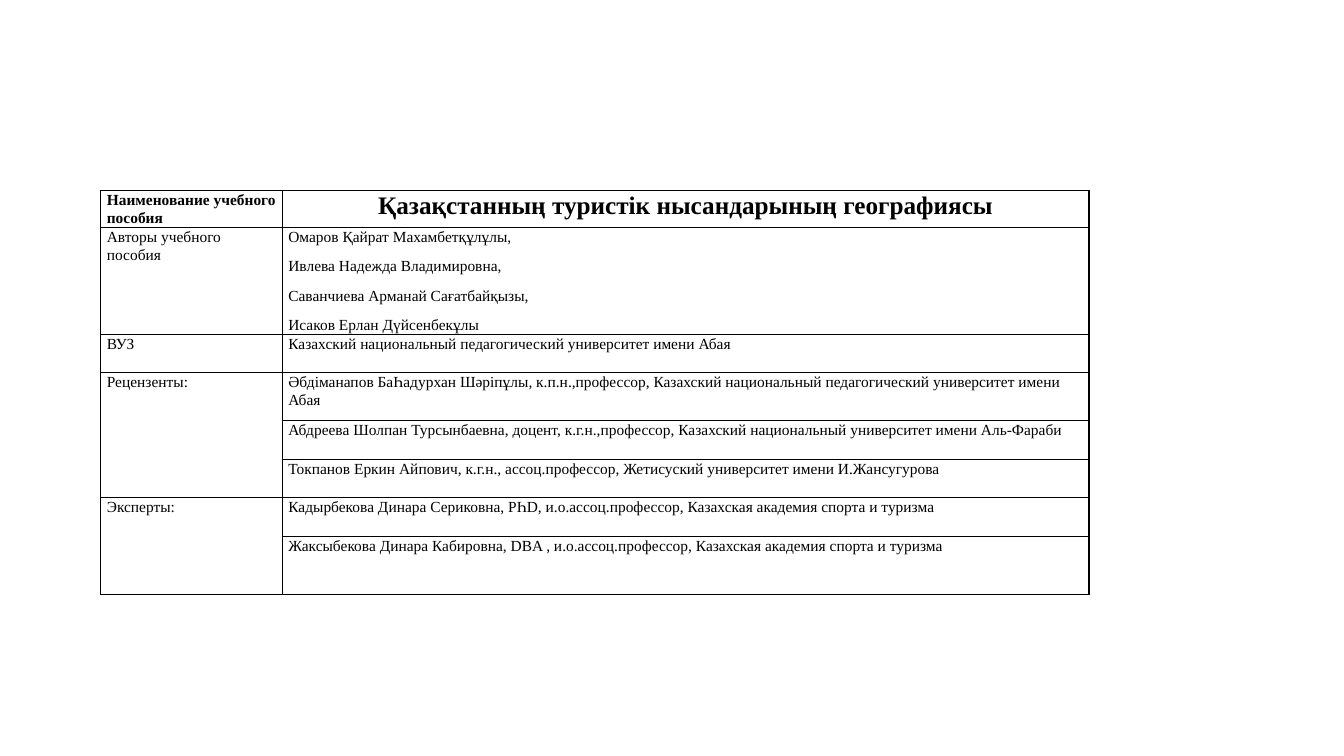
from lxml.etree import SubElement
from pptx import Presentation
from pptx.dml.color import RGBColor
from pptx.enum.text import PP_ALIGN
from pptx.oxml.ns import qn
from pptx.util import Inches, Pt


def color(code):
    return RGBColor.from_string(code)


def write(frame, text, size=11, bold=False, align=PP_ALIGN.LEFT,
          font="Times New Roman", ink="000000"):
    """Fill a text frame, one paragraph per line of text."""
    frame.word_wrap = True
    for i, line in enumerate(text.split("\n")):
        para = frame.paragraphs[0] if i == 0 else frame.add_paragraph()
        para.alignment = align
        para.line_spacing = 1.07
        para.space_before = Pt(0)
        para.space_after = Pt(8)
        run = para.add_run()
        run.text = line
        run.font.name = font
        run.font.size = Pt(size)
        run.font.bold = bold
        run.font.color.rgb = color(ink)


class Deck:
    line = "000000"
    inset = 0.06

    def __init__(self, show):
        self.slide = show.slides.add_slide(show.slide_layouts[6])

    def border(self, cell, width=1):
        props = cell._tc.get_or_add_tcPr()
        for side in ("lnL", "lnR", "lnT", "lnB"):
            edge = SubElement(props, qn("a:" + side), w=str(Pt(width)))
            fill = SubElement(edge, qn("a:solidFill"))
            SubElement(fill, qn("a:srgbClr"), val=self.line)

    def table(self, left, top, cols, rows):
        frame = self.slide.shapes.add_table(
            len(rows), len(cols), Inches(left), Inches(top),
            Inches(sum(cols)), Inches(sum(rows)))
        grid = frame.table
        grid.first_row = grid.horz_banding = False
        for col, width in zip(grid.columns, cols):
            col.width = Inches(width)
        for row, height in zip(grid.rows, rows):
            row.height = Inches(height)
        for cell in grid.iter_cells():
            cell.margin_left = cell.margin_right = Inches(self.inset)
            cell.margin_top = cell.margin_bottom = 0
            self.border(cell)
            cell.fill.background()
        return grid


# Each group: label, then the entries beside it
GROUPS = [
    ("Наименование учебного пособия",
     ["Қазақстанның туристік нысандарының географиясы"]),
    ("Авторы учебного пособия",
     ["Омаров Қайрат Махамбетқұлұлы,\n"
      "Ивлева Надежда Владимировна,\n"
      "Саванчиева Арманай Сағатбайқызы,\n"
      "Исаков Ерлан Дүйсенбекұлы"]),
    ("ВУЗ",
     ["Казахский национальный педагогический университет имени Абая"]),
    ("Рецензенты:",
     ["Әбдіманапов БаҺадурхан Шәріпұлы, к.п.н.,профессор, "
      "Казахский национальный педагогический университет имени Абая",
      "Абдреева Шолпан Турсынбаевна, доцент, к.г.н.,профессор, "
      "Казахский национальный университет имени Аль-Фараби",
      "Токпанов Еркин Айпович, к.г.н., ассоц.профессор, "
      "Жетисуский университет имени И.Жансугурова"]),
    ("Эксперты:",
     ["Кадырбекова Динара Сериковна, PҺD, и.о.ассоц.профессор, "
      "Казахская академия спорта и туризма",
      "Жаксыбекова Динара Кабировна, DBA , и.о.ассоц.профессор, "
      "Казахская академия спорта и туризма"]),
]


def main():
    show = Presentation()
    show.slide_width, show.slide_height = Inches(13.33), Inches(7.5)
    deck = Deck(show)
    grid = deck.table(1, 1.89, [1.8, 8],
                      [0.36, 1.06, 0.38, 0.48, 0.38, 0.38, 0.39, 0.57])

    # Labels span all the entries of their group
    row = 0
    for label, items in GROUPS:
        head = row == 0
        cell = grid.cell(row, 0)
        if len(items) > 1:
            cell.merge(grid.cell(row + len(items) - 1, 0))
        write(cell.text_frame, label, bold=head)
        for item in items:
            write(grid.cell(row, 1).text_frame, item, bold=head,
                  size=18 if head else 11,
                  align=PP_ALIGN.CENTER if head else PP_ALIGN.LEFT)
            row += 1

    show.save("out.pptx")


if __name__ == "__main__":
    main()
